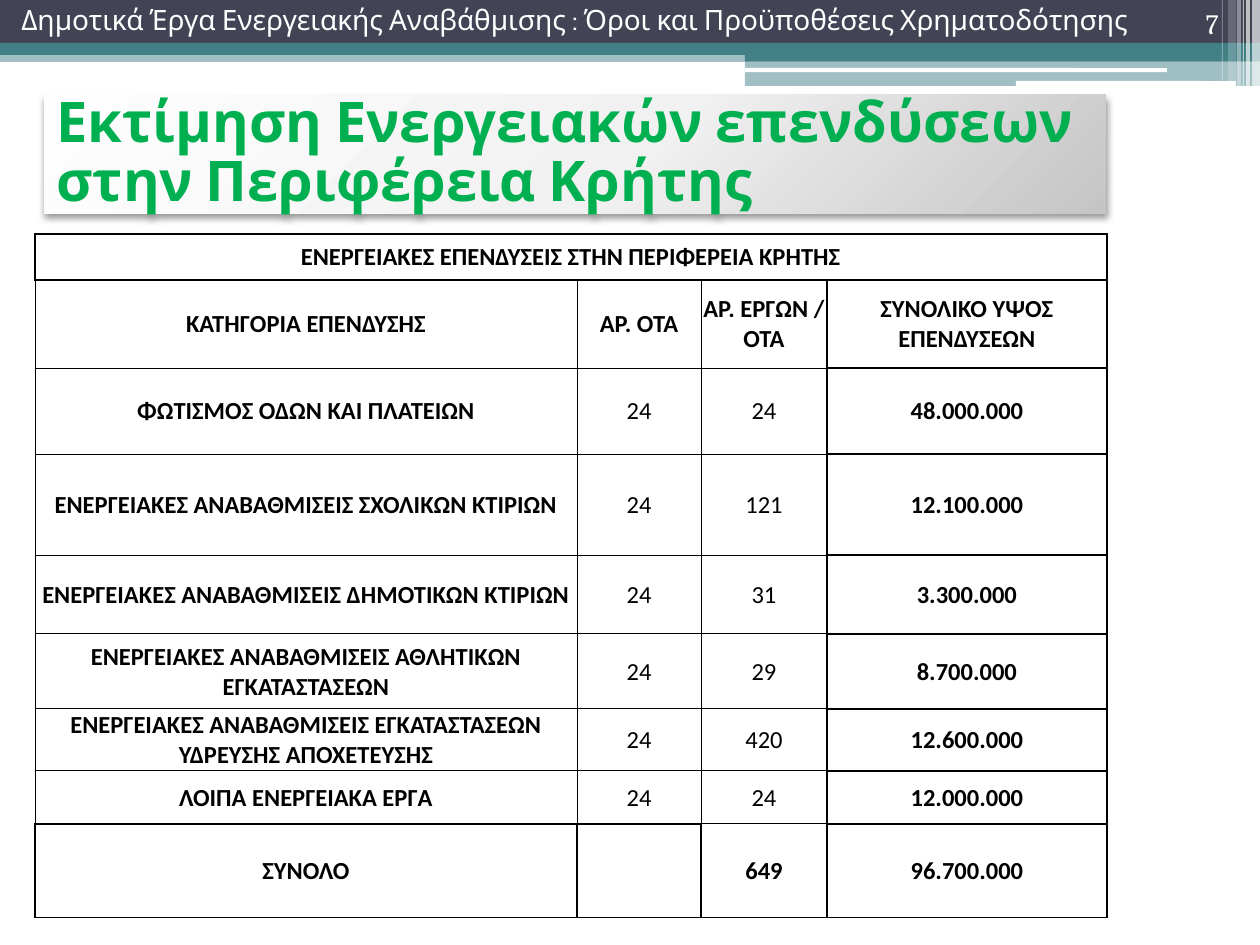
from lxml.etree import SubElement
from pptx import Presentation
from pptx.dml.color import RGBColor
from pptx.enum.shapes import MSO_SHAPE as Shape
from pptx.enum.text import MSO_ANCHOR as Anchor, PP_ALIGN as Align
from pptx.oxml import parse_xml
from pptx.oxml.ns import nsdecls, qn
from pptx.util import Emu, Pt

EMU_PER_PX = 914400 / 126

COLORS = {
    "navy": "424456", "teal": "438086", "white": "FFFFFF", "black": "000000",
    "green": "00B050", "light": "FEFEFE", "middle": "F1F1F1", "dark": "C5C5C5",
}

BARS = [
    (0, 50, 1260, 12, "teal", 50),
    (0, 0, 1260, 43, "navy", 100),
    (0, 43, 1260, 12, "teal", 100),
    (745, 49, 515, 12, "teal", 100),
    (745, 61, 515, 25, "teal", 50),
]
HIGHLIGHTS = [(745, 68, 422, 4), (1016, 81, 220, 5)]
STRIPES = [
    (1252, 8, 86, 65), (1246, 4, 86, 65), (1243, 1, 86, 60),
    (1237, 4, 86, 40), (1228, 8, 81, 20), (1222, 1, 81, 30),
]

COLUMN_WIDTHS = [542, 124, 126, 280]
ROW_HEIGHTS = [46, 88, 86, 101, 79, 75, 62, 53, 94]
ROWS = [
    ("ΕΝΕΡΓΕΙΑΚΕΣ ΕΠΕΝΔΥΣΕΙΣ ΣΤΗΝ ΠΕΡΙΦΕΡΕΙΑ ΚΡΗΤΗΣ", "", "", ""),
    ("ΚΑΤΗΓΟΡΙΑ ΕΠΕΝΔΥΣΗΣ", "ΑΡ. ΟΤΑ", "ΑΡ. ΕΡΓΩΝ / ΟΤΑ", "ΣΥΝΟΛΙΚΟ ΥΨΟΣ ΕΠΕΝΔΥΣΕΩΝ"),
    ("ΦΩΤΙΣΜΟΣ ΟΔΩΝ ΚΑΙ ΠΛΑΤΕΙΩΝ", "24", "24", "48.000.000"),
    ("ΕΝΕΡΓΕΙΑΚΕΣ ΑΝΑΒΑΘΜΙΣΕΙΣ ΣΧΟΛΙΚΩΝ ΚΤΙΡΙΩΝ", "24", "121", "12.100.000"),
    ("ΕΝΕΡΓΕΙΑΚΕΣ ΑΝΑΒΑΘΜΙΣΕΙΣ ΔΗΜΟΤΙΚΩΝ ΚΤΙΡΙΩΝ", "24", "31", "3.300.000"),
    ("ΕΝΕΡΓΕΙΑΚΕΣ ΑΝΑΒΑΘΜΙΣΕΙΣ ΑΘΛΗΤΙΚΩΝ ΕΓΚΑΤΑΣΤΑΣΕΩΝ", "24", "29", "8.700.000"),
    ("ΕΝΕΡΓΕΙΑΚΕΣ ΑΝΑΒΑΘΜΙΣΕΙΣ ΕΓΚΑΤΑΣΤΑΣΕΩΝ ΥΔΡΕΥΣΗΣ ΑΠΟΧΕΤΕΥΣΗΣ", "24", "420", "12.600.000"),
    ("ΛΟΙΠΑ ΕΝΕΡΓΕΙΑΚΑ ΕΡΓΑ", "24", "24", "12.000.000"),
    ("ΣΥΝΟΛΟ", "", "649", "96.700.000"),
]


def px(value):
    return Emu(round(value * EMU_PER_PX))


def box(*lengths):
    return [px(length) for length in lengths]


def style_font(paragraph, name, size, color, bold=False):
    font = paragraph.font
    font.name, font.size, font.bold = name, Pt(size), bold
    font.color.rgb = RGBColor.from_string(COLORS[color])


def add_bar(slide, left, top, width, height, color, opacity=100, preset=Shape.RECTANGLE):
    bar = slide.shapes.add_shape(preset, *box(left, top, width, height))
    bar.shadow.inherit = False
    bar.line.fill.background()
    bar.fill.solid()
    bar.fill.fore_color.rgb = RGBColor.from_string(COLORS[color])
    if opacity < 100:
        color_element = bar.fill._xPr.find(qn("a:solidFill"))[0]
        SubElement(color_element, qn("a:alpha"), val=str(opacity * 1000))


def add_text(slide, text, position, anchor):
    text_box = slide.shapes.add_textbox(*box(*position))
    frame = text_box.text_frame
    frame.word_wrap = True
    frame.vertical_anchor = anchor
    paragraph = frame.paragraphs[0]
    paragraph.text = text
    return paragraph


def add_title(slide, text):
    title = slide.shapes.add_shape(Shape.RECTANGLE, *box(44, 95, 1062, 119))
    title.line.fill.background()
    properties = title._element.spPr
    stops = "".join(
        f'<a:gs pos="{position * 1000}"><a:srgbClr val="{COLORS[color]}"/></a:gs>'
        for position, color in [(0, "light"), (55, "middle"), (100, "dark")]
    )
    properties.find(qn("a:ln")).addprevious(parse_xml(
        f'<a:gradFill {nsdecls("a")} rotWithShape="1"><a:gsLst>{stops}</a:gsLst>'
        '<a:path path="circle"><a:fillToRect l="-40000" t="-90000" r="140000" b="190000"/>'
        '</a:path></a:gradFill>'
    ))
    properties.append(parse_xml(
        f'<a:effectLst {nsdecls("a")}><a:outerShdw blurRad="{Pt(4.1)}" dist="{Pt(2)}" '
        f'dir="5400000" rotWithShape="0"><a:srgbClr val="{COLORS["black"]}">'
        '<a:alpha val="40000"/></a:srgbClr></a:outerShdw></a:effectLst>'
    ))
    frame = title.text_frame
    frame.word_wrap = True
    frame.vertical_anchor = Anchor.MIDDLE
    paragraph = frame.paragraphs[0]
    paragraph.text = text
    paragraph.alignment = Align.LEFT
    paragraph.line_spacing = 0.88
    style_font(paragraph, "Cabin", 32, "green", True)


def border_widths(row, column):
    total = len(ROWS) - 1
    if 0 < row < total and column < 3:
        return {
            "L": 0.5,
            "R": 1 if column == 2 else 0.5,
            "T": 1 if row == 1 else 0.5,
            "B": 1 if row == total - 1 and column < 2 else 0.5,
        }
    edge = 0.5 if (row, column) == (total, 2) else 1
    return {"L": 1, "R": 1, "T": edge, "B": edge}


def set_borders(cell, widths):
    properties = cell._tc.get_or_add_tcPr()
    for index, (side, width) in enumerate(widths.items()):
        properties.insert(index, parse_xml(
            f'<a:ln{side} {nsdecls("a")} w="{Pt(width)}"><a:solidFill>'
            f'<a:srgbClr val="{COLORS["black"]}"/></a:solidFill></a:ln{side}>'
        ))


def fill_cell(cell, text, bold):
    cell.fill.background()
    cell.vertical_anchor = Anchor.MIDDLE
    cell.margin_left = cell.margin_right = cell.margin_top = px(1)
    cell.margin_bottom = 0
    paragraph = cell.text_frame.paragraphs[0]
    paragraph.text = text
    paragraph.alignment = Align.CENTER
    style_font(paragraph, "Calibri", 14, "black", bold)


def add_investment_table(slide):
    position = box(35, 234, sum(COLUMN_WIDTHS), sum(ROW_HEIGHTS))
    table = slide.shapes.add_table(len(ROWS), len(COLUMN_WIDTHS), *position).table
    table.first_row = table.horz_banding = False
    for column, width in zip(table.columns, COLUMN_WIDTHS):
        column.width = px(width)
    for row, height in zip(table.rows, ROW_HEIGHTS):
        row.height = px(height)
    for row, texts in enumerate(ROWS):
        for column, text in enumerate(texts):
            cell = table.cell(row, column)
            is_count = 1 < row < len(ROWS) - 1 and column in (1, 2)
            fill_cell(cell, text, not is_count)
            set_borders(cell, border_widths(row, column))
    table.cell(0, 0).merge(table.cell(0, 3))


def main():
    presentation = Presentation()
    presentation.slide_width, presentation.slide_height = box(1260, 945)
    slide = presentation.slides.add_slide(presentation.slide_layouts[6])
    for bar in BARS:
        add_bar(slide, *bar)
    for highlight in HIGHLIGHTS:
        add_bar(slide, *highlight, "white", preset=Shape.ROUNDED_RECTANGLE)
    for left, width, height, opacity in STRIPES:
        add_bar(slide, left, 0, width, height, "white", opacity)
    add_title(slide, "Εκτίμηση Ενεργειακών επενδύσεων στην Περιφέρεια Κρήτης")
    number = add_text(slide, "7", (1126, 10, 105, 36), Anchor.BOTTOM)
    number.alignment = Align.RIGHT
    style_font(number, "Cambria", 16, "white")
    header = add_text(
        slide,
        "Δημοτικά Έργα Ενεργειακής Αναβάθμισης : Όροι και Προϋποθέσεις Χρηματοδότησης",
        (0, 0, 1191, 39), Anchor.MIDDLE,
    )
    header.space_before = Pt(3)
    header._p.get_or_add_pPr().set("marL", str(px(9)))
    style_font(header, "Cabin", 16, "white")
    add_investment_table(slide)
    presentation.save("out.pptx")


if __name__ == "__main__":
    main()
